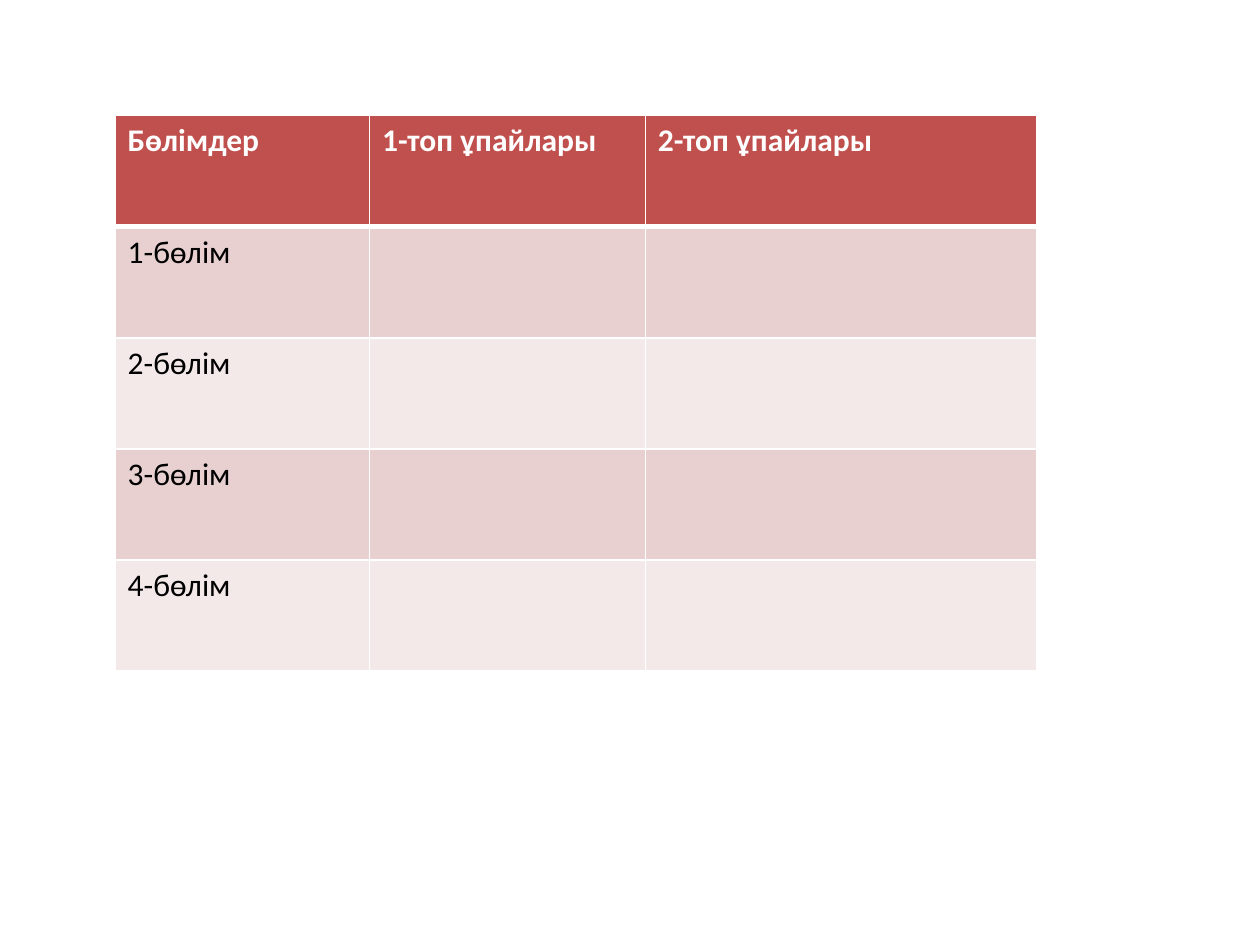
"""Build a slide with a score table for two groups over four sections."""
from dataclasses import dataclass

from lxml.etree import SubElement
from pptx import Presentation
from pptx.dml.color import RGBColor
from pptx.oxml.ns import qn
from pptx.table import _Cell
from pptx.util import Cm, Pt

WHITE = RGBColor(0xFF, 0xFF, 0xFF)
BLACK = RGBColor(0x00, 0x00, 0x00)
RED = RGBColor(0xC0, 0x50, 0x4D)
ROSE = RGBColor(0xE8, 0xD0, 0xD0)
PALE = RGBColor(0xF4, 0xE9, 0xE9)

WIDTHS = [Cm(5.13), Cm(5.56), Cm(7.9)]
HEIGHT = Cm(2.24)


@dataclass
class Row:
    texts: list[str]
    fill: RGBColor
    color: RGBColor = BLACK
    bold: bool = False
    top: float = 1
    bottom: float = 1


ROWS = [
    Row(["Бөлімдер", "1-топ ұпайлары", "2-топ ұпайлары"], RED, WHITE, True, bottom=3),
    *(
        Row([f"{n}-бөлім", "", ""], ROSE if n % 2 else PALE, top=3 if n == 1 else 1)
        for n in range(1, 5)
    ),
]


def edge(cell: _Cell, side: str, width: float) -> None:
    props = cell._tc.get_or_add_tcPr()
    line = SubElement(props, qn(f"a:ln{side}"), w=str(Pt(width)))
    fill = SubElement(line, qn("a:solidFill"))
    SubElement(fill, qn("a:srgbClr"), val=str(WHITE))


def draw_cell(cell: _Cell, text: str, row: Row) -> None:
    for side, width in (("L", 1), ("R", 1), ("T", row.top), ("B", row.bottom)):
        edge(cell, side, width)
    cell.fill.solid()
    cell.fill.fore_color.rgb = row.fill
    cell.text = text
    font = cell.text_frame.paragraphs[0].font
    font.name = "Calibri"
    font.size = Pt(18)
    font.bold = row.bold
    font.color.rgb = row.color


def main() -> None:
    deck = Presentation()
    deck.slide_width, deck.slide_height = Cm(25.4), Cm(19.05)
    slide = deck.slides.add_slide(deck.slide_layouts[6])
    table = slide.shapes.add_table(
        len(ROWS), len(WIDTHS), Cm(2.32), Cm(2.33), sum(WIDTHS), HEIGHT * len(ROWS)
    ).table
    for column, width in zip(table.columns, WIDTHS):
        column.width = width
    for line, row in zip(table.rows, ROWS):
        line.height = HEIGHT
        for cell, text in zip(line.cells, row.texts):
            draw_cell(cell, text, row)
    deck.save("out.pptx")


if __name__ == "__main__":
    main()
